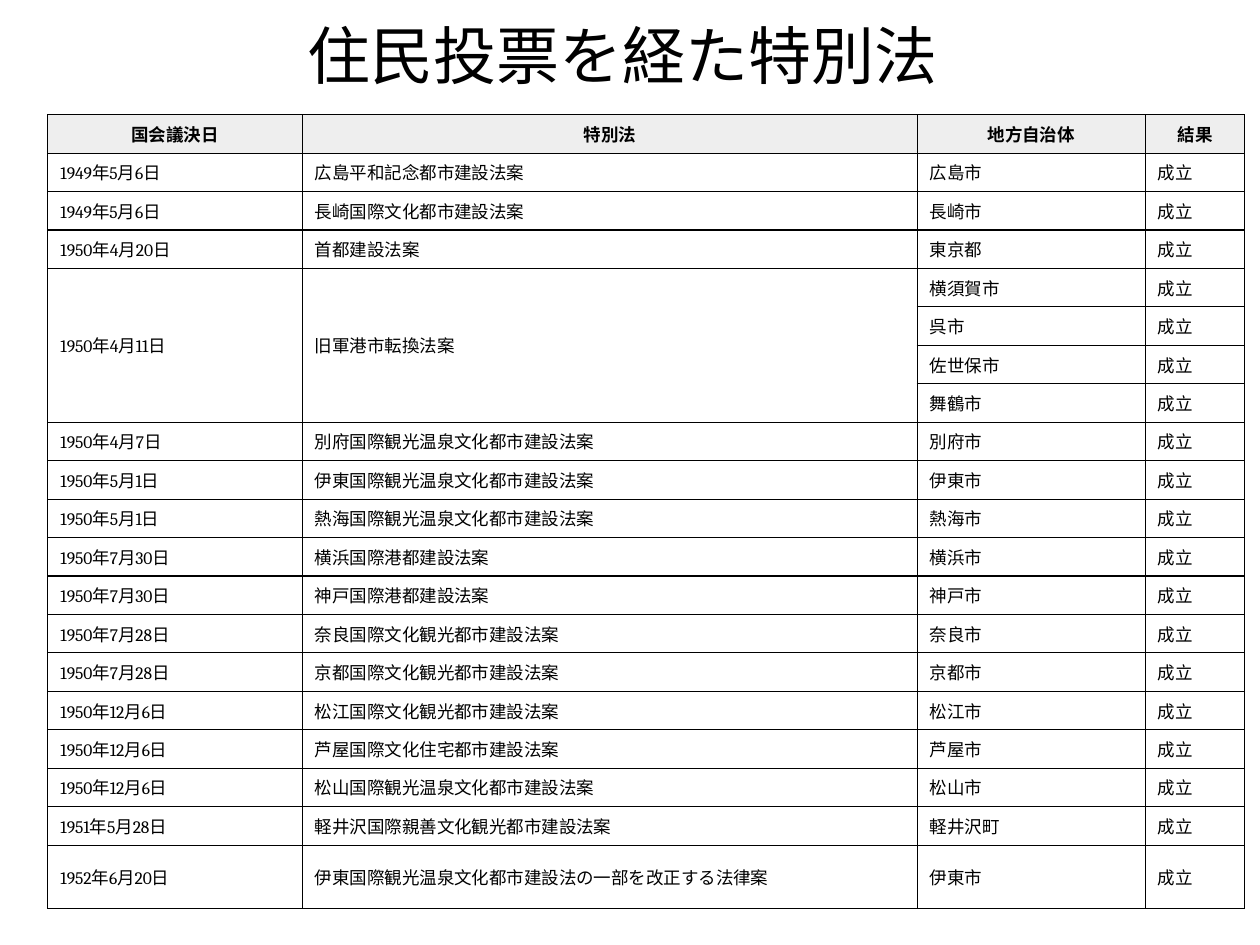
from lxml.etree import SubElement
from pptx import Presentation
from pptx.dml.color import RGBColor
from pptx.enum.text import MSO_ANCHOR as Anchor, PP_ALIGN as Align
from pptx.oxml.ns import qn
from pptx.util import Inches, Pt

BLACK = RGBColor(0x00, 0x00, 0x00)
GRAY = RGBColor(0xEE, 0xEE, 0xEE)

HEADS = ["国会議決日", "特別法", "地方自治体", "結果"]
RESULT = "成立"
LAWS = [
    ("1949年5月6日", "広島平和記念都市建設法案", ["広島市"]),
    ("1949年5月6日", "長崎国際文化都市建設法案", ["長崎市"]),
    ("1950年4月20日", "首都建設法案", ["東京都"]),
    ("1950年4月11日", "旧軍港市転換法案", ["横須賀市", "呉市", "佐世保市", "舞鶴市"]),
    ("1950年4月7日", "別府国際観光温泉文化都市建設法案", ["別府市"]),
    ("1950年5月1日", "伊東国際観光温泉文化都市建設法案", ["伊東市"]),
    ("1950年5月1日", "熱海国際観光温泉文化都市建設法案", ["熱海市"]),
    ("1950年7月30日", "横浜国際港都建設法案", ["横浜市"]),
    ("1950年7月30日", "神戸国際港都建設法案", ["神戸市"]),
    ("1950年7月28日", "奈良国際文化観光都市建設法案", ["奈良市"]),
    ("1950年7月28日", "京都国際文化観光都市建設法案", ["京都市"]),
    ("1950年12月6日", "松江国際文化観光都市建設法案", ["松江市"]),
    ("1950年12月6日", "芦屋国際文化住宅都市建設法案", ["芦屋市"]),
    ("1950年12月6日", "松山国際観光温泉文化都市建設法案", ["松山市"]),
    ("1951年5月28日", "軽井沢国際親善文化観光都市建設法案", ["軽井沢町"]),
    ("1952年6月20日", "伊東国際観光温泉文化都市建設法の一部を改正する法律案", ["伊東市"]),
]
WIDTHS = [2.02, 4.88, 1.81, 0.79]
LAST = 0.5  # height of the last row


def style_text(para, size, face, bold=False):
    for run in para.runs:
        font = run.font
        font.size, font.name, font.bold = Pt(size), face, bold
        font.color.rgb = BLACK


def add_title(slide, left, top, width, height):
    title = slide.shapes.title
    title.left, title.top = Inches(left), Inches(top)
    title.width, title.height = Inches(width), Inches(height)
    frame = title.text_frame
    frame.text = "住民投票を経た特別法 "
    frame.vertical_anchor = Anchor.MIDDLE
    para = frame.paragraphs[0]
    para.alignment = Align.CENTER
    style_text(para, 36, "Calibri")


def add_edges(cell):
    props = cell._tc.get_or_add_tcPr()
    for side in ("lnL", "lnR", "lnT", "lnB"):
        line = SubElement(props, qn(f"a:{side}"), w=str(Pt(0.75)))
        fill = SubElement(line, qn("a:solidFill"))
        SubElement(fill, qn("a:srgbClr"), val=str(BLACK))


def style_cell(cell, head):
    cell.vertical_anchor = Anchor.MIDDLE
    cell.margin_top = cell.margin_bottom = Inches(0.03)
    add_edges(cell)
    if head:
        cell.fill.solid()
        cell.fill.fore_color.rgb = GRAY
    else:
        cell.fill.background()
    para = cell.text_frame.paragraphs[0]
    para.alignment = Align.CENTER if head else Align.LEFT
    style_text(para, 10, "Cambria", head)


def add_laws(slide, left, top, width, height):
    count = 1 + sum(len(towns) for _, _, towns in LAWS)
    table = slide.shapes.add_table(
        count, len(HEADS), Inches(left), Inches(top), Inches(width), Inches(height)
    ).table
    table.horz_banding = False
    table.first_row = False
    for col, size in zip(table.columns, WIDTHS):
        col.width = Inches(size)
    for row in table.rows:
        row.height = Inches((height - LAST) / (count - 1))
    table.rows[count - 1].height = Inches(LAST)

    for col, head in enumerate(HEADS):
        table.cell(0, col).text = head
    row = 1
    for date, law, towns in LAWS:
        end = row + len(towns) - 1
        for col, text in enumerate((date, law)):
            table.cell(row, col).text = text
            if end > row:
                table.cell(row, col).merge(table.cell(end, col))
        for step, town in enumerate(towns):
            table.cell(row + step, 2).text = town
            table.cell(row + step, 3).text = RESULT
        row = end + 1

    for row in range(count):
        for col in range(len(HEADS)):
            style_cell(table.cell(row, col), row == 0)


def main():
    deck = Presentation()
    deck.slide_width, deck.slide_height = Inches(10), Inches(7.5)
    slide = deck.slides.add_slide(deck.slide_layouts[5])
    add_title(slide, 0.5, 0.13, 9, 0.61)
    add_laws(slide, 0.38, 0.91, 9.5, 6.3)
    deck.save("out.pptx")


if __name__ == "__main__":
    main()
